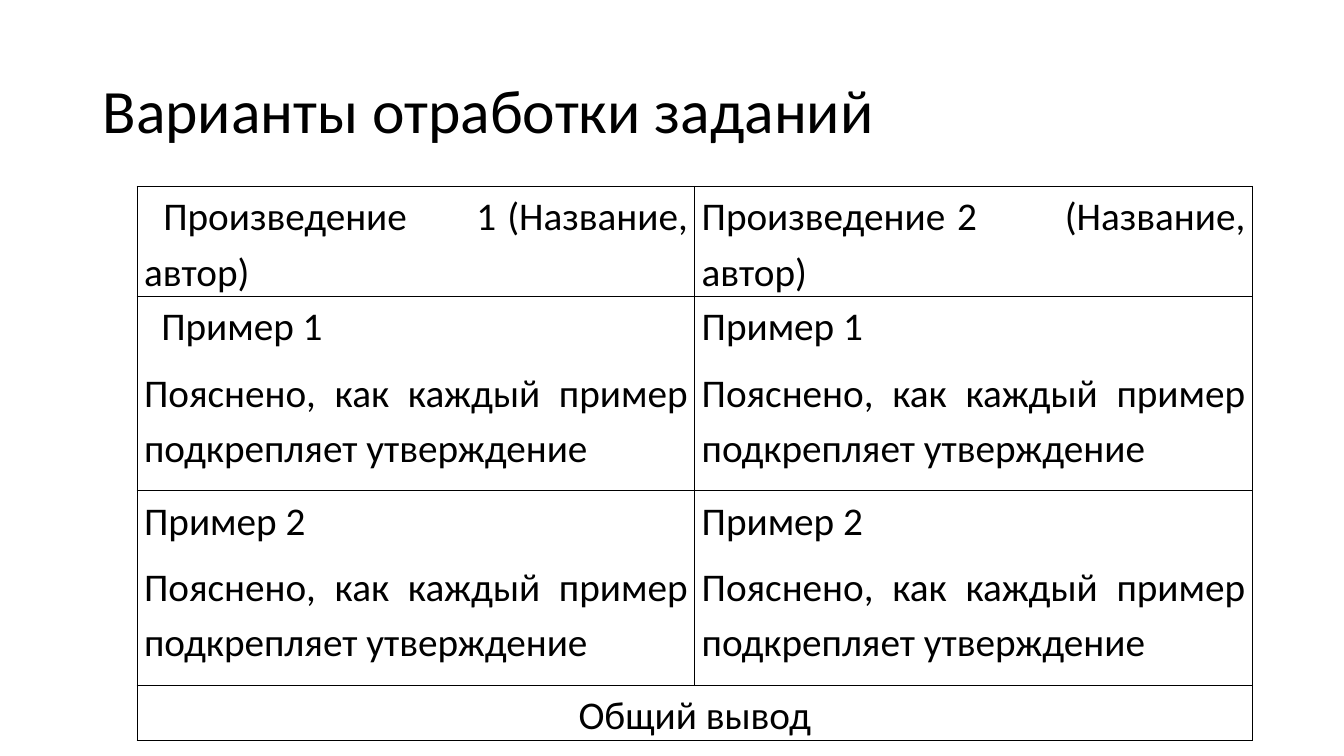
from lxml.etree import SubElement
from pptx import Presentation
from pptx.dml.color import RGBColor as RGB
from pptx.enum.text import MSO_ANCHOR as Anchor, PP_ALIGN as Align
from pptx.oxml.ns import qn
from pptx.util import Inches, Pt

COLORS = {"ink": "000000", "paper": "FFFFFF"}
FONT = "Calibri"

NOTE = "Пояснено, как каждый пример подкрепляет утверждение"
HEAD = "Произведение {}\t(Название, автор)"
GRID = [
    [[HEAD.format(1)], [HEAD.format(2)]],
    [["Пример 1", NOTE]] * 2,
    [["Пример 2", NOTE]] * 2,
    [["Общий вывод"], []],
]
HEIGHTS = [1.09, 1.93, 1.93, 0.55]
INDENTS = {(0, 0): 0.19, (1, 0): 0.17}  # first-line indents by cell
TAB = 3.57


def put(para, text, size=28, color="ink", align=Align.LEFT, line=1.0,
        after=0, indent=0, tab=None):
    """Write text into a paragraph with the given format."""
    para.alignment, para.line_spacing = align, line
    para.space_before, para.space_after = Pt(0), Pt(after)
    props = para._p.get_or_add_pPr()
    if indent:
        props.set("marL", "0")
        props.set("indent", str(Inches(indent)))
    if tab:
        stops = SubElement(props, qn("a:tabLst"))
        SubElement(stops, qn("a:tab"), pos=str(Inches(tab)), algn="l")
    run = para.add_run()
    run.text = text
    run.font.name, run.font.size = FONT, Pt(size)
    run.font.color.rgb = RGB.from_string(COLORS[color])


class Deck:
    def __init__(self):
        self.show = Presentation()
        self.show.slide_width = Inches(13.33)
        self.show.slide_height = Inches(7.5)
        self.slide = self.show.slides.add_slide(self.show.slide_layouts[6])
        fill = self.slide.background.fill
        fill.solid()
        fill.fore_color.rgb = RGB.from_string(COLORS["paper"])

    def title(self, text, left, top, width, height):
        box = self.slide.shapes.add_textbox(
            Inches(left), Inches(top), Inches(width), Inches(height))
        frame = box.text_frame
        frame.word_wrap = True
        frame.vertical_anchor = Anchor.MIDDLE
        put(frame.paragraphs[0], text, size=44, line=0.9)

    def border(self, cell, width=1):
        props = cell._tc.get_or_add_tcPr()
        for spot, side in enumerate(("lnL", "lnR", "lnT", "lnB")):
            edge = SubElement(props, qn(f"a:{side}"), w=str(Pt(width)))
            props.insert(spot, edge)
            fill = SubElement(edge, qn("a:solidFill"))
            SubElement(fill, qn("a:srgbClr"), val=COLORS["ink"])

    def cell(self, cell, lines, align, indent):
        cell.margin_left = cell.margin_right = Inches(0.07)
        cell.margin_top = cell.margin_bottom = 0
        cell.fill.background()
        self.border(cell)
        frame = cell.text_frame
        for spot, text in enumerate(lines):
            para = frame.add_paragraph() if spot else frame.paragraphs[0]
            put(para, text, align=align, line=1.15, after=8,
                indent=0 if spot else indent,
                tab=TAB if "\t" in text else None)

    def table(self, grid, left, top, width, heights):
        cols = len(grid[0])
        table = self.slide.shapes.add_table(
            len(grid), cols, Inches(left), Inches(top),
            Inches(width), Inches(sum(heights))).table
        table.first_row = table.horz_banding = False
        for col in table.columns:
            col.width = Inches(width / cols)
        last = len(grid) - 1
        table.cell(last, 0).merge(table.cell(last, cols - 1))
        for r, row in enumerate(grid):
            table.rows[r].height = Inches(heights[r])
            align = Align.CENTER if r == last else Align.JUSTIFY
            for c, lines in enumerate(row):
                self.cell(table.cell(r, c), lines, align,
                          INDENTS.get((r, c), 0))


def main():
    deck = Deck()
    # Heading
    deck.title("Варианты отработки заданий", 0.92, 0.4, 11.5, 1.45)
    # Comparison of the two works
    deck.table(GRID, 1.36, 1.85, 11.06, HEIGHTS)
    deck.show.save("out.pptx")


if __name__ == "__main__":
    main()
